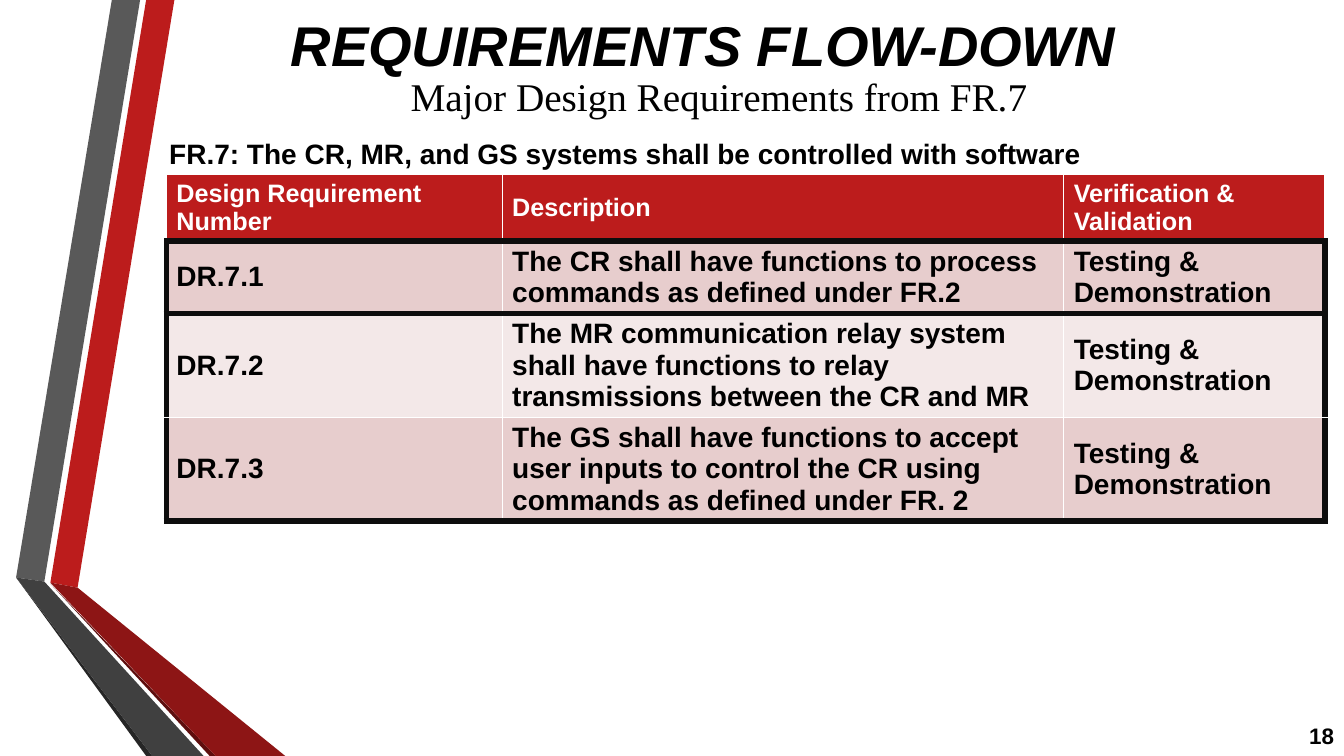
from lxml.etree import SubElement
from pptx import Presentation
from pptx.dml.color import RGBColor
from pptx.enum.text import MSO_ANCHOR as Anchor, PP_ALIGN as Align
from pptx.oxml.ns import qn
from pptx.util import Inches, Pt

BLACK, WHITE, RED, EDGE = "000000", "FFFFFF", "BC1C1C", "0D0D0D"
BANDS = ["E7CDCD", "F3E8E8"]
THICK, THIN = (EDGE, 4.5), (WHITE, 1)

RIBBONS = [
    (RED, [(0.5, 5.78), (0.77, 5.83), (1.73, 0), (1.45, 0)]),
    ("595959", [(1.39, 0), (1.11, 0), (0.16, 5.73), (0.44, 5.77)]),
    ("262626", [(0.16, 5.73), (1.45, 7.5), (1.51, 7.5)]),
    ("5E0E0E", [(0.5, 5.79), (2.08, 7.5), (2.14, 7.5)]),
    ("8D1515", [(0.5, 5.78), (2.14, 7.5), (2.83, 7.5), (0.77, 5.83)]),
    ("404040", [(2.02, 7.5), (0.44, 5.77), (0.16, 5.73), (1.51, 7.5)]),
]
COLUMNS = [3.33, 5.57, 2.59]
ROW_HEIGHTS = [0.65, 0.72, 1.03, 1.03]
REQUIREMENTS = [
    ("Design Requirement Number", "Description", "Verification & Validation"),
    ("DR.7.1", "The CR shall have functions to process commands as defined under FR.2",
     "Testing & Demonstration"),
    ("DR.7.2", "The MR communication relay system shall have functions to relay "
     "transmissions between the CR and MR", "Testing & Demonstration"),
    ("DR.7.3", "The GS shall have functions to accept user inputs to control the CR "
     "using commands as defined under FR. 2", "Testing & Demonstration"),
]


def rgb(color):
    return RGBColor.from_string(color)


def add_run(p, text, size, color=BLACK, font="Arial", bold=True, italic=False):
    r = p.add_run()
    r.text = text
    r.font.size = Pt(size)
    r.font.name = font
    r.font.bold = bold
    r.font.italic = italic
    r.font.color.rgb = rgb(color)


def add_text(slide, box, text, size, align=Align.LEFT, right_inset=0.1, **style):
    tf = slide.shapes.add_textbox(*map(Inches, box)).text_frame
    tf.word_wrap = True
    tf.vertical_anchor = Anchor.MIDDLE
    tf.margin_right = Inches(right_inset)
    p = tf.paragraphs[0]
    p.alignment = align
    add_run(p, text, size, **style)


def add_ribbons(slide, left, top):
    for color, points in RIBBONS:
        points = [(Inches(left + x), Inches(top + y)) for x, y in points]
        builder = slide.shapes.build_freeform(*points[0])
        builder.add_line_segments(points[1:], close=True)
        sp = builder.convert_to_shape()
        sp.shadow.inherit = False
        sp.fill.solid()
        sp.fill.fore_color.rgb = rgb(color)
        sp.line.fill.background()


def set_borders(cell, **sides):
    tc_pr = cell._tc.get_or_add_tcPr()
    for side in "LRTB":
        color, width = sides[side]
        ln = SubElement(tc_pr, qn(f"a:ln{side}"), w=str(Pt(width)))
        SubElement(SubElement(ln, qn("a:solidFill")), qn("a:srgbClr"), val=color)


def add_requirements(slide, left, top):
    last_row, last_col = len(REQUIREMENTS) - 1, len(COLUMNS) - 1
    box = (left, top, sum(COLUMNS), sum(ROW_HEIGHTS))
    table = slide.shapes.add_table(last_row + 1, last_col + 1, *map(Inches, box)).table
    for column, width in zip(table.columns, COLUMNS):
        column.width = Inches(width)
    for i, (row, height, texts) in enumerate(zip(table.rows, ROW_HEIGHTS, REQUIREMENTS)):
        row.height = Inches(height)
        header = i == 0
        for j, (cell, text) in enumerate(zip(row.cells, texts)):
            set_borders(
                cell,
                L=THICK if j == 0 and not header else THIN,
                R=THICK if j == last_col and not header else THIN,
                T=THICK if i in (1, 2) else THIN,
                B=THICK if i in (0, 1, last_row) else THIN,
            )
            cell.fill.solid()
            cell.fill.fore_color.rgb = rgb(RED if header else BANDS[(i - 1) % 2])
            cell.vertical_anchor = Anchor.MIDDLE
            add_run(cell.text_frame.paragraphs[0], text,
                    18 if header else 20, WHITE if header else BLACK)


def add_headings(slide, left, top, width):
    add_text(slide, (left, top, width, 0.88), "REQUIREMENTS FLOW-DOWN", 40,
             Align.CENTER, right_inset=0.41, italic=True)
    add_text(slide, (left, top + 0.67, width, 0.57), "Major Design Requirements from FR.7",
             28, Align.CENTER, font="Times New Roman", bold=False)
    add_text(slide, (left - 0.07, top + 1.24, width, 0.57),
             "FR.7: The CR, MR, and GS systems shall be controlled with software", 20)


def main():
    prs = Presentation()
    prs.slide_width, prs.slide_height = Inches(13.33), Inches(7.5)
    slide = prs.slides.add_slide(prs.slide_layouts[6])
    add_ribbons(slide, 0, 0)
    add_requirements(slide, 1.65, 1.73)
    add_headings(slide, 1.65, 0, 10.96)
    add_text(slide, (12.73, 7.1, 0.6, 0.4), "18", 16, Align.RIGHT)
    prs.save("out.pptx")


if __name__ == "__main__":
    main()
